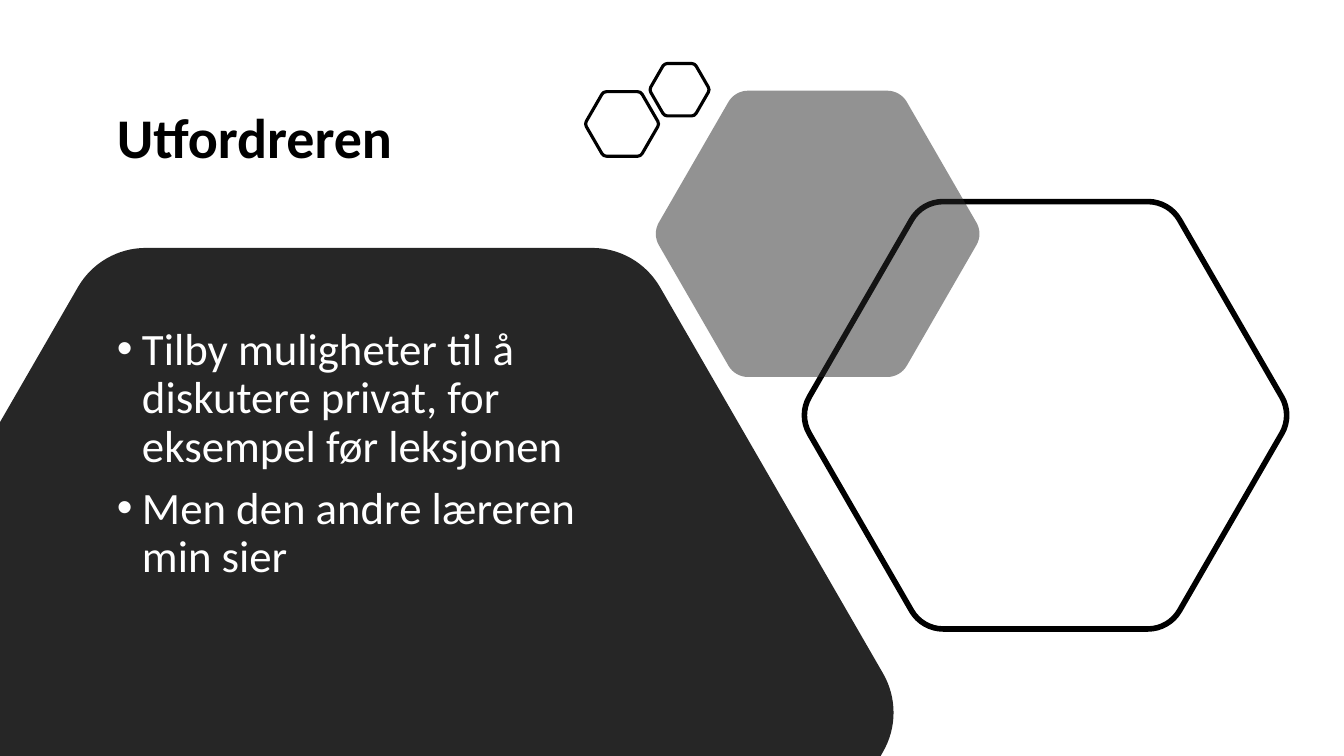
from dataclasses import dataclass
from math import cos, radians, sin, sqrt
from typing import NamedTuple, Optional

from lxml import etree
from pptx import Presentation
from pptx import util as u
from pptx.dml.color import RGBColor
from pptx.enum import text
from pptx.oxml import ns

BLACK = RGBColor(0x00, 0x00, 0x00)
CHARCOAL = RGBColor(0x26, 0x26, 0x26)
WHITE = RGBColor(0xFF, 0xFF, 0xFF)
SLIDE_W, SLIDE_H = 13.33, 7.5
ARC_HANDLE = 0.62  # share of the way to the tip for a 60-degree arc

Point = tuple[float, float]


class Node(NamedTuple):
    """A point of the outline; two neighbours with one tip are joined by an arc."""

    x: float
    y: float
    tip: Optional[Point] = None


@dataclass(frozen=True)
class Hexagon:
    x: float
    y: float
    apothem: float
    cut: float  # length taken off each edge at a rounded corner
    fill: Optional[RGBColor] = None
    opacity: int = 100
    line: float = 0


@dataclass(frozen=True)
class TextBlock:
    box: tuple[float, float, float, float]
    paragraphs: tuple[str, ...]
    font: dict
    color: RGBColor
    anchor: text.MSO_ANCHOR
    bulleted: bool = False


LARGE_HEXAGONS = (
    Hexagon(3.66, 7.07, 4.61, 0.45, fill=CHARCOAL),
    Hexagon(10.37, 4.12, 2.12, 0.21, line=4),
    Hexagon(8.11, 2.32, 1.42, 0.13, fill=CHARCOAL, opacity=50),
)
SMALL_HEXAGONS = (
    Hexagon(6.17, 1.23, 0.32, 0.03, line=2.25),
    Hexagon(6.74, 0.89, 0.26, 0.03, line=2.25),
)
TEXTS = (
    TextBlock(
        (1.06, 0.49, 4.68, 1.8),
        ("Utfordreren",),
        {"size": u.Pt(40), "bold": True, "name": "Calibri"},
        BLACK,
        text.MSO_ANCHOR.MIDDLE,
    ),
    TextBlock(
        (1.06, 3.19, 5.45, 3.38),
        (
            "Tilby muligheter til å diskutere privat, for eksempel før leksjonen",
            "Men den andre læreren min sier",
        ),
        {"size": u.Pt(32), "name": "Calibri"},
        WHITE,
        text.MSO_ANCHOR.TOP,
        bulleted=True,
    ),
)


def outline(h: Hexagon) -> list[Node]:
    """Give the two ends of the arc at each corner, clockwise from the right."""
    reach = 2 * h.apothem / sqrt(3)
    nodes = []
    for corner in range(0, 360, 60):
        tip = (h.x + reach * cos(radians(corner)), h.y + reach * sin(radians(corner)))
        for turn in (-120, 120):
            a = radians(corner + turn)
            nodes.append(Node(tip[0] + h.cut * cos(a), tip[1] + h.cut * sin(a), tip))
    return nodes


def clip(nodes: list[Node], axis: int, limit: float, sign: int) -> list[Node]:
    """Keep the side of the polygon where sign * (coordinate - limit) >= 0."""
    kept = []
    for a, b in zip(nodes, nodes[1:] + nodes[:1]):
        da, db = sign * (a[axis] - limit), sign * (b[axis] - limit)
        if da >= 0:
            kept.append(a)
        if da * db < 0:
            t = da / (da - db)
            kept.append(Node(a.x + t * (b.x - a.x), a.y + t * (b.y - a.y)))
    return kept


def handle(node: Node) -> Point:
    tip_x, tip_y = node.tip
    return (
        node.x + ARC_HANDLE * (tip_x - node.x),
        node.y + ARC_HANDLE * (tip_y - node.y),
    )


def bend(segments: list) -> None:
    """Turn three line segments into one cubic curve."""
    curve = etree.Element(ns.qn("a:cubicBezTo"))
    segments[0].addprevious(curve)
    for segment in segments:
        curve.append(segment[0])
        segment.getparent().remove(segment)


def draw_hexagon(container, h: Hexagon) -> None:
    nodes = clip(clip(outline(h), 0, 0, 1), 1, SLIDE_H, -1)
    vertices, arcs = [], []
    for a, b in zip(nodes, nodes[1:]):
        if a.tip and a.tip == b.tip:
            arcs.append(len(vertices))
            vertices += [handle(a), handle(b)]
        vertices.append((b.x, b.y))
    builder = container.build_freeform(
        u.Inches(nodes[0].x), u.Inches(nodes[0].y), scale=1
    )
    builder.add_line_segments([(u.Inches(x), u.Inches(y)) for x, y in vertices])
    sp = builder.convert_to_shape()
    segments = list(sp._element.iter(ns.qn("a:lnTo")))
    for i in arcs:
        bend(segments[i : i + 3])
    sp.shadow.inherit = False
    if h.fill is None:
        sp.fill.background()
    else:
        sp.fill.solid()
        sp.fill.fore_color.rgb = h.fill
        if h.opacity < 100:
            color = sp._element.spPr.find(".//" + ns.qn("a:srgbClr"))
            etree.SubElement(color, ns.qn("a:alpha"), val=str(h.opacity * 1000))
    if h.line:
        sp.line.color.rgb = BLACK
        sp.line.width = u.Pt(h.line)
    else:
        sp.line.fill.background()


def add_bullet(p) -> None:
    pPr = p._p.get_or_add_pPr()
    indent = u.Inches(0.25)
    pPr.set("marL", str(indent))
    pPr.set("indent", str(-indent))
    etree.SubElement(pPr, ns.qn("a:buFont"), typeface="Arial")
    etree.SubElement(pPr, ns.qn("a:buChar"), char="•")


def draw_text(s, block: TextBlock) -> None:
    sp = s.shapes.add_textbox(*map(u.Inches, block.box))
    tf = sp.text_frame
    tf.word_wrap = True
    tf.vertical_anchor = block.anchor
    for i, words in enumerate(block.paragraphs):
        p = tf.add_paragraph() if i else tf.paragraphs[0]
        p.line_spacing = 0.9
        if block.bulleted:
            p.space_before = u.Pt(10)
            add_bullet(p)
        r = p.add_run()
        r.text = words
        for name, value in block.font.items():
            setattr(r.font, name, value)
        r.font.color.rgb = block.color


def main() -> None:
    prs = Presentation()
    prs.slide_width, prs.slide_height = u.Inches(SLIDE_W), u.Inches(SLIDE_H)
    s = prs.slides.add_slide(prs.slide_layouts[6])
    for h in LARGE_HEXAGONS:
        draw_hexagon(s.shapes, h)
    group = s.shapes.add_group_shape()
    for h in SMALL_HEXAGONS:
        draw_hexagon(group.shapes, h)
    for block in TEXTS:
        draw_text(s, block)
    prs.save("out.pptx")


if __name__ == "__main__":
    main()
